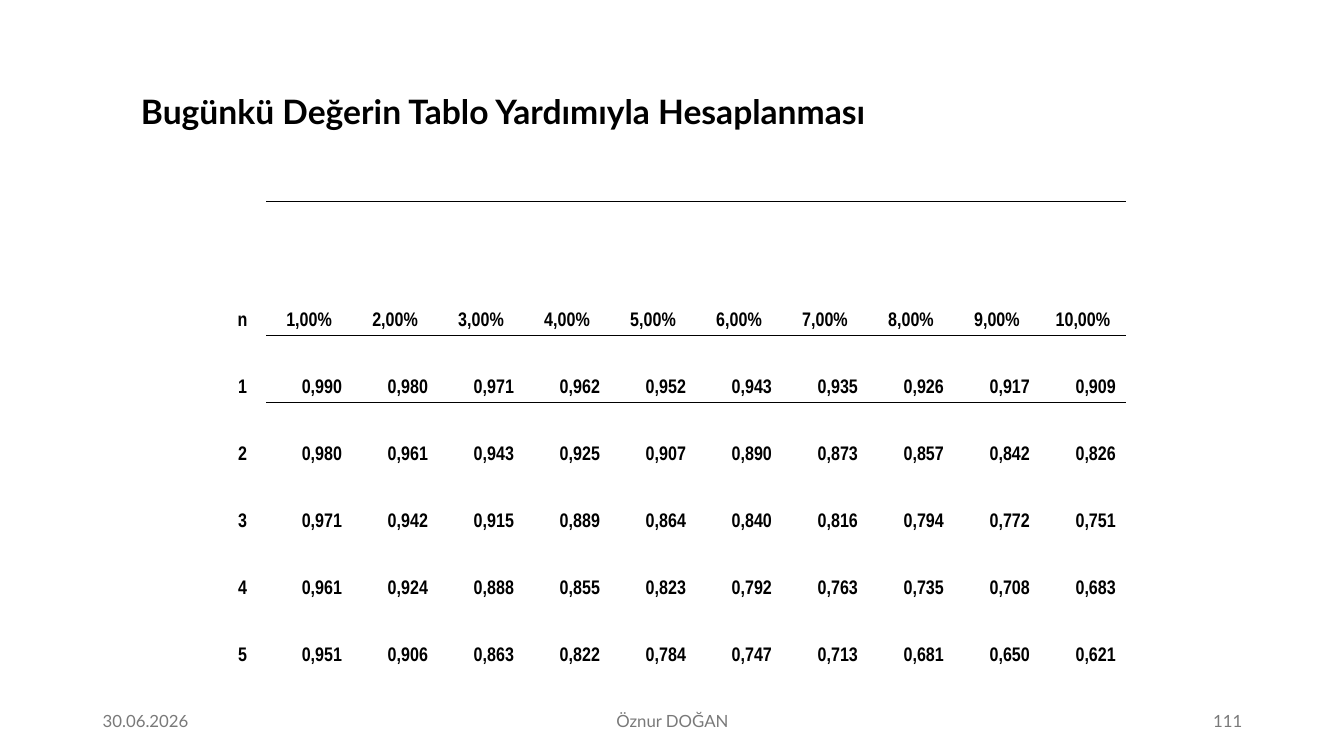
from lxml import etree
from pptx import Presentation
from pptx.dml.color import RGBColor
from pptx.enum.text import MSO_ANCHOR, PP_ALIGN
from pptx.oxml.ns import qn
from pptx.util import Inches, Pt

LEFT, CENTER, RIGHT = PP_ALIGN.LEFT, PP_ALIGN.CENTER, PP_ALIGN.RIGHT
MIDDLE, BOTTOM = MSO_ANCHOR.MIDDLE, MSO_ANCHOR.BOTTOM

COLORS = {"text": "000000", "footer": "797979", "rule": "000000"}
TITLE = "Bugünkü Değerin Tablo Yardımıyla Hesaplanması"
FOOTERS = [
    ("30.06.2026", 0.92, 3, LEFT),
    ("Öznur DOĞAN", 4.42, 4.5, CENTER),
    ("111", 9.42, 3, RIGHT),
]
RATES = ["n", "1,00%", "2,00%", "3,00%", "4,00%", "5,00%",
         "6,00%", "7,00%", "8,00%", "9,00%", "10,00%"]
FACTORS = [
    ["1", "0,990", "0,980", "0,971", "0,962", "0,952", "0,943", "0,935", "0,926", "0,917", "0,909"],
    ["2", "0,980", "0,961", "0,943", "0,925", "0,907", "0,890", "0,873", "0,857", "0,842", "0,826"],
    ["3", "0,971", "0,942", "0,915", "0,889", "0,864", "0,840", "0,816", "0,794", "0,772", "0,751"],
    ["4", "0,961", "0,924", "0,888", "0,855", "0,823", "0,792", "0,763", "0,735", "0,708", "0,683"],
    ["5", "0,951", "0,906", "0,863", "0,822", "0,784", "0,747", "0,713", "0,681", "0,650", "0,621"],
]
PERIOD_WIDTH, RATE_WIDTH = 0.47, 0.853
HEADER_HEIGHT, FACTOR_HEIGHT = 1.33, 0.665
HANGING = 0.38
PLAIN_STYLE = "{2D5ABB26-0587-4C30-8999-92F81FD0307C}"


def write(frame, text, font="Lato", size=12, color="text", bold=False,
          align=LEFT, spacing=None, hanging=0):
    paragraph = frame.paragraphs[0]
    paragraph.alignment = align
    if spacing:
        paragraph.line_spacing = spacing
    if hanging:
        properties = paragraph._p.get_or_add_pPr()
        properties.set("marL", str(Inches(hanging)))
        properties.set("indent", str(-Inches(hanging)))
    run = paragraph.add_run()
    run.text = text
    run.font.name = font
    run.font.size = Pt(size)
    run.font.bold = bold
    run.font.color.rgb = RGBColor.from_string(COLORS[color])


def add_label(slide, text, left, top, width, height, **style):
    frame = slide.shapes.add_textbox(
        Inches(left), Inches(top), Inches(width), Inches(height)).text_frame
    frame.word_wrap = True
    frame.vertical_anchor = MIDDLE
    write(frame, text, **style)


def add_rule(cell, side):
    line = etree.SubElement(cell._tc.get_or_add_tcPr(), qn(f"a:ln{side}"), w=str(Pt(1)))
    fill = etree.SubElement(line, qn("a:solidFill"))
    etree.SubElement(fill, qn("a:srgbClr"), val=COLORS["rule"])


def add_factor_table(slide):
    rows = [RATES] + FACTORS
    widths = [PERIOD_WIDTH] + [RATE_WIDTH] * (len(RATES) - 1)
    heights = [HEADER_HEIGHT] + [FACTOR_HEIGHT] * len(FACTORS)
    table = slide.shapes.add_table(
        len(rows), len(RATES), Inches(2.17), Inches(2),
        Inches(sum(widths)), Inches(sum(heights))).table
    table.first_row = table.horz_banding = False
    table._tbl.tblPr.find(qn("a:tableStyleId")).text = PLAIN_STYLE
    for column, width in zip(table.columns, widths):
        column.width = Inches(width)
    for row, height in zip(table.rows, heights):
        row.height = Inches(height)
    for r, values in enumerate(rows):
        for c, value in enumerate(values):
            cell = table.cell(r, c)
            cell.vertical_anchor = BOTTOM
            write(cell.text_frame, value, font="Arial Narrow", size=14, bold=True,
                  align=RIGHT if r and c else CENTER, hanging=HANGING)
            if c and r < 2:
                for side in "TB" if r == 0 else "T":
                    add_rule(cell, side)
            cell.fill.background()


def main():
    deck = Presentation()
    deck.slide_width, deck.slide_height = Inches(13.33), Inches(7.5)
    slide = deck.slides.add_slide(deck.slide_layouts[6])
    add_label(slide, TITLE, 1.3, 0.4, 11.12, 1.45, size=24, bold=True, spacing=0.9)
    for text, left, width, align in FOOTERS:
        add_label(slide, text, left, 6.95, width, 0.4, color="footer", align=align)
    add_factor_table(slide)
    deck.save("out.pptx")


if __name__ == "__main__":
    main()
